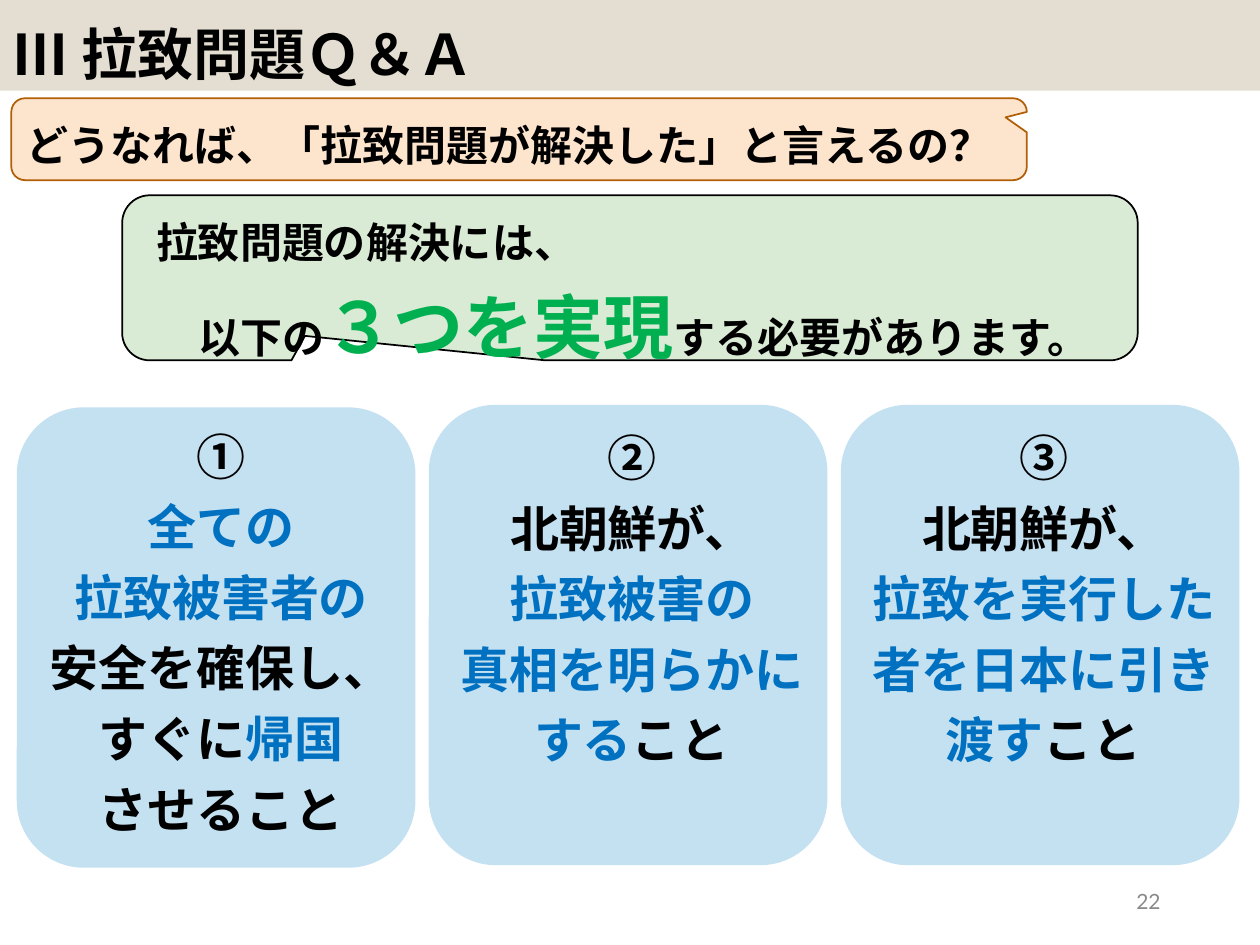
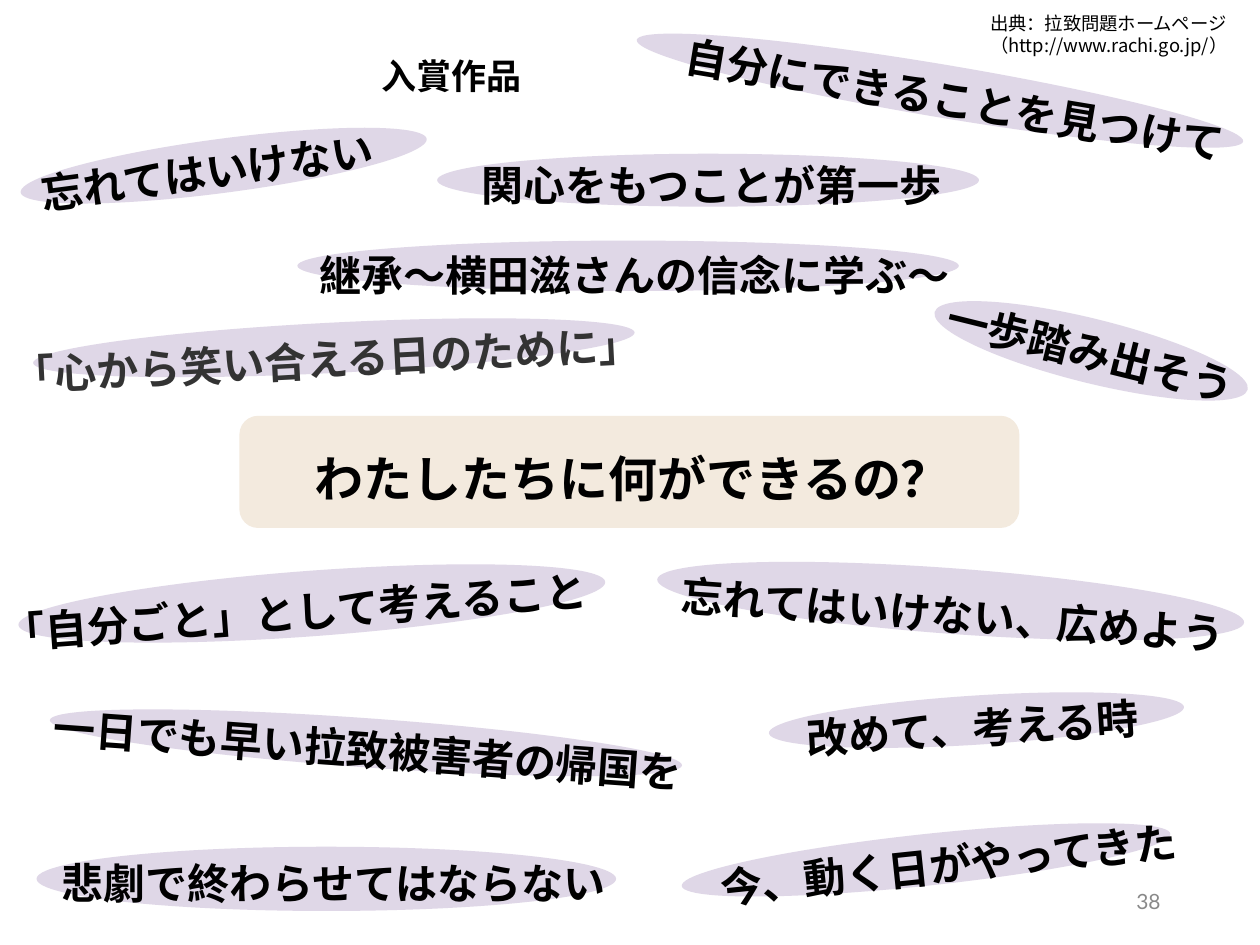
from dataclasses import dataclass

from pptx import Presentation
from pptx import util as u
from pptx.dml.color import RGBColor
from pptx.enum import shapes, text
from pptx.oxml.ns import qn

Inches = u.Inches
Kind = shapes.MSO_SHAPE
Align = text.PP_ALIGN

BLACK = RGBColor(0x00, 0x00, 0x00)
CHARCOAL = RGBColor(0x33, 0x33, 0x33)
GREY = RGBColor(0x89, 0x89, 0x89)
BLUE = RGBColor(0x00, 0x70, 0xC0)
GREEN = RGBColor(0x00, 0xB0, 0x50)
TITLE_BAND = RGBColor(0xE3, 0xDE, 0xD1)
QUESTION_FILL = RGBColor(0xFD, 0xE5, 0xCD)
QUESTION_EDGE = RGBColor(0xB2, 0x5E, 0x07)
ANSWER_FILL = RGBColor(0xD9, 0xEA, 0xD5)
CARD_FILL = RGBColor(0xC4, 0xE1, 0xF2)
LILAC = RGBColor(0xDF, 0xD7, 0xE7)
CREAM = RGBColor(0xF3, 0xEA, 0xDE)

JAPANESE = "Noto Sans CJK JP"
LATIN = "Lato"
LOOSE = 1.2

Area = tuple[float, float, float, float]


@dataclass(frozen=True)
class Span:
    words: str
    color: RGBColor = BLACK
    size: float = 24
    bold: bool = True
    font: str = JAPANESE


@dataclass(frozen=True)
class Card:
    """A numbered condition; each line is a list of (words, colour)."""
    top: float
    text_area: Area
    lines: list[list[tuple[str, RGBColor]]]


@dataclass(frozen=True)
class Essay:
    """An essay title lying over a tilted ellipse."""
    title: str
    oval: Area
    text_area: Area
    angle: float = 0
    color: RGBColor = BLACK


CARDS = [
    Card(3.24, (0.07, 3.24, 3.37, 3.09), [
        [("①", BLACK)],
        [("全ての", BLUE)],
        [("拉致被害者の", BLUE)],
        [("安全を確保し、", BLACK)],
        [("すぐに", BLACK), ("帰国", BLUE)],
        [("させること", BLACK)],
    ]),
    Card(3.22, (3.44, 3.25, 3.15, 2.59), [
        [("②", BLACK)],
        [("北朝鮮が、", BLACK)],
        [("拉致被害の", BLUE)],
        [("真相を明らかにする", BLUE), ("こと", BLACK)],
    ]),
    Card(3.22, (6.82, 3.25, 2.93, 2.59), [
        [("③", BLACK)],
        [("北朝鮮が、", BLACK)],
        [("拉致を実行した者を日本に引き渡す", BLUE), ("こと", BLACK)],
    ]),
]
CARD_LEFT, CARD_STEP, CARD_WIDTH, CARD_HEIGHT = 0.14, 3.27, 3.15, 3.64

ESSAYS = [
    Essay("忘れてはいけない", (0.15, 1.1, 3.25, 0.43), (0.22, 1.11, 2.89, 0.51), 352.5),
    Essay("「心から笑い合える日のために」", (0.26, 2.56, 4.78, 0.4),
          (0, 2.6, 5.25, 0.5), 357.1, CHARCOAL),
    Essay("「自分ごと」として考えること", (0.14, 4.53, 4.67, 0.52),
          (-0.08, 4.6, 4.91, 0.51), 355.8),
    Essay("一歩踏み出そう", (7.38, 2.53, 2.56, 0.51), (7.39, 2.54, 2.56, 0.51), 13.9),
    Essay("一日でも早い拉致被害者の帰国を", (0.39, 5.7, 5.03, 0.39),
          (0.32, 5.7, 5.25, 0.5), 4.1),
    Essay("継承～横田滋さんの信念に学ぶ～", (2.36, 1.91, 5.25, 0.4), (2.44, 1.93, 5.25, 0.5)),
    Essay("関心をもつことが第一歩", (3.47, 1.22, 4.3, 0.42), (3.72, 1.22, 3.9, 0.51)),
    Essay("悲劇で終わらせてはならない", (0.29, 6.72, 4.6, 0.51), (0.39, 6.76, 4.58, 0.51)),
    Essay("今、動く日がやってきた", (5.4, 6.62, 3.9, 0.41), (5.61, 6.6, 3.91, 0.51), 353.9),
    Essay("忘れてはいけない、広めよう", (5.21, 4.51, 4.67, 0.52),
          (5.31, 4.63, 4.58, 0.5), 4.2),
    Essay("自分にできることを見つけて", (5.02, 0.51, 4.88, 0.42), (5.31, 0.6, 5.2, 0.51), 9.5),
    Essay("改めて、考える時", (6.1, 5.52, 3.3, 0.39), (6.3, 5.52, 2.9, 0.51), 356.4),
]


def fill_frame(frame, lines: list[list[Span]], align=Align.LEFT, spacing: float = 1.0) -> None:
    for index, line in enumerate(lines):
        para = frame.paragraphs[0] if index == 0 else frame.add_paragraph()
        para.alignment = align
        para.line_spacing = spacing
        for span in line:
            run = para.add_run()
            run.text = span.words
            font = run.font
            font.name, font.size, font.bold = span.font, u.Pt(span.size), span.bold
            font.color.rgb = span.color
            east_asian = font._element.makeelement(qn("a:ea"), {"typeface": span.font})
            font._element.find(qn("a:latin")).addnext(east_asian)


def add_panel(page, kind, area: Area, fill: RGBColor, edge: RGBColor | None = None,
              adjust: tuple[float, ...] = (), angle: float = 0):
    panel = page.shapes.add_shape(kind, *map(Inches, area))
    panel.shadow.inherit = False
    panel.fill.solid()
    panel.fill.fore_color.rgb = fill
    if edge is None:
        panel.line.fill.background()
    else:
        panel.line.color.rgb = edge
        panel.line.width = u.Pt(1)
    for index, value in enumerate(adjust):
        panel.adjustments[index] = value
    panel.rotation = angle
    return panel


def add_text(page, area: Area, lines: list[list[Span]], align=Align.LEFT,
             spacing: float = 1.0, wrap: bool = True, angle: float = 0):
    box = page.shapes.add_textbox(*map(Inches, area))
    box.rotation = angle
    frame = box.text_frame
    frame.word_wrap = wrap
    frame.auto_size = text.MSO_AUTO_SIZE.SHAPE_TO_FIT_TEXT
    fill_frame(frame, lines, align, spacing)
    return box


def add_page_number(page, number: int) -> None:
    box = add_text(page, (7.06, 6.95, 2.25, 0.4),
                   [[Span(str(number), GREY, 12, False, LATIN)]], Align.RIGHT)
    box.text_frame.auto_size = text.MSO_AUTO_SIZE.NONE
    box.text_frame.vertical_anchor = text.MSO_ANCHOR.MIDDLE


def add_card(page, left: float, card: Card) -> None:
    add_panel(page, Kind.ROUNDED_RECTANGLE, (left, card.top, CARD_WIDTH, CARD_HEIGHT),
              CARD_FILL, CARD_FILL)
    lines = [[Span(words, color, 28) for words, color in line] for line in card.lines]
    add_text(page, card.text_area, lines, Align.CENTER, LOOSE)


def add_essay(page, essay: Essay) -> None:
    add_panel(page, Kind.OVAL, essay.oval, LILAC, angle=essay.angle)
    add_text(page, essay.text_area, [[Span(essay.title, essay.color)]],
             wrap=False, angle=essay.angle)


def build_question_page(page) -> None:
    band = add_panel(page, Kind.RECTANGLE, (0, 0, 10, 0.72), TITLE_BAND)
    band.text_frame.vertical_anchor = text.MSO_ANCHOR.TOP
    fill_frame(band.text_frame, [[Span("Ⅲ 拉致問題Ｑ＆Ａ", size=32)]], spacing=LOOSE)

    add_panel(page, Kind.ROUNDED_RECTANGULAR_CALLOUT, (0.09, 0.78, 8.06, 0.65),
              QUESTION_FILL, QUESTION_EDGE, (0.479, -0.267, 0.167))
    add_text(page, (0.11, 0.82, 7.95, 0.57),
             [[Span("どうなれば、「拉致問題が解決した」と言えるの？")]], spacing=LOOSE)
    add_page_number(page, 22)

    add_panel(page, Kind.ROUNDED_RECTANGULAR_CALLOUT, (0.97, 1.55, 8.06, 1.31),
              ANSWER_FILL, BLACK, (-0.32, 0.352, 0.167))
    answer = add_text(page, (1.14, 1.59, 7.73, 1.36), [
        [Span("拉致問題の解決には、")],
        [Span("以下の"), Span("３つを実現", GREEN, 40), Span("する必要があります。")],
    ], spacing=LOOSE)
    indented = answer.text_frame.paragraphs[1]
    indented._p.get_or_add_pPr().set("marL", str(u.Pt(24)))

    for index, card in enumerate(CARDS):
        add_card(page, CARD_LEFT + index * CARD_STEP, card)


def build_essay_page(page) -> None:
    add_page_number(page, 38)
    for essay in ESSAYS:
        add_essay(page, essay)
    source = ["出典：拉致問題ホームページ", "（http://www.rachi.go.jp/）"]
    add_text(page, (7.76, 0.05, 2.51, 0.45),
             [[Span(line, size=10.5, bold=False)] for line in source])
    add_text(page, (2.93, 0.38, 1.32, 0.44), [[Span("入賞作品", size=20)]], wrap=False)
    add_panel(page, Kind.ROUNDED_RECTANGLE, (1.9, 3.3, 6.19, 0.89), CREAM)
    add_text(page, (2.4, 3.51, 5.41, 0.65), [[Span("わたしたちに何ができるの？", size=28)]])


def main() -> None:
    deck = Presentation()
    deck.slide_width, deck.slide_height = Inches(10), Inches(7.5)
    blank = deck.slide_layouts[6]
    for build in (build_question_page, build_essay_page):
        build(deck.slides.add_slide(blank))
    deck.save("out.pptx")


if __name__ == "__main__":
    main()
